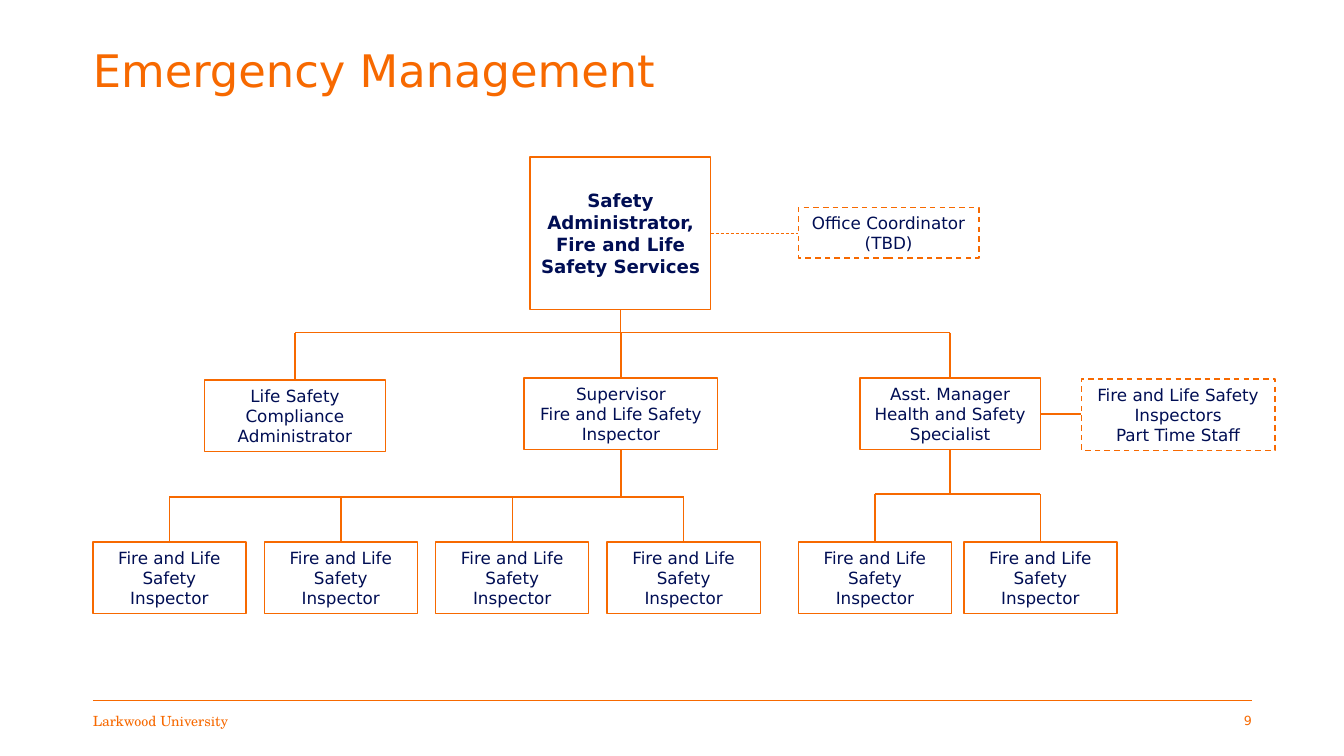
from lxml import etree
from pptx import Presentation
from pptx.dml.color import RGBColor
from pptx.enum.dml import MSO_LINE
from pptx.enum.shapes import MSO_CONNECTOR, MSO_SHAPE
from pptx.enum.text import MSO_ANCHOR, PP_ALIGN
from pptx.oxml.ns import qn
from pptx.util import Cm, Pt

COLORS = {"orange": "F76900", "navy": "000E54"}
SANS, SERIF = "DejaVu Sans", "TeX Gyre Schola"
LEFT, CENTER, RIGHT = PP_ALIGN.LEFT, PP_ALIGN.CENTER, PP_ALIGN.RIGHT
MIDDLE = MSO_ANCHOR.MIDDLE
RECTANGLE, STRAIGHT = MSO_SHAPE.RECTANGLE, MSO_CONNECTOR.STRAIGHT
DASH = MSO_LINE.DASH

MARGIN, CONTENT_WIDTH = Cm(2.34), Cm(29.21)
FOOTER_TOP, FOOTER_WIDTH, FOOTER_HEIGHT = Cm(17.65), Cm(5.33), Cm(1.02)
NARROW, MEDIUM, WIDE, ROW_HEIGHT = 3.86, 4.55, 4.88, 1.8
INSPECTOR = "Fire and Life Safety\nInspector"


def write(frame, text, size=12, font=SANS, color="navy", bold=False,
          align=CENTER, spacing=None, side_inset=None):
    """Fill a text frame, one paragraph for each line of the text."""
    frame.word_wrap = True
    frame.vertical_anchor = MIDDLE
    if side_inset is not None:
        frame.margin_left = frame.margin_right = side_inset
    frame.text = text
    for para in frame.paragraphs:
        para.alignment = align
        para.line_spacing = spacing
        for span in para.runs:
            span.font.name = font
            span.font.size = Pt(size)
            span.font.bold = bold
            span.font.color.rgb = RGBColor.from_string(COLORS[color])


def style_line(line, width=1, dash=None):
    line.color.rgb = RGBColor.from_string(COLORS["orange"])
    line.width = Pt(width)
    if dash is not None:
        line.dash_style = dash


def add_role(page, text, left, top, width, height=ROW_HEIGHT, dash=None, **format):
    """Add an outlined role box; lengths in centimetres."""
    box = page.shapes.add_shape(RECTANGLE, Cm(left), Cm(top), Cm(width), Cm(height))
    box.shadow.inherit = False
    box.fill.background()
    style_line(box.line, dash=dash)
    write(box.text_frame, text, **format)
    return box


def add_rule(page, x1, y1, x2, y2, width=1, dash=None):
    rule = page.shapes.add_connector(STRAIGHT, x1, y1, x2, y2)
    style_line(rule.line, width, dash)
    etree.SubElement(rule._element.spPr, qn("a:effectLst"))


def center_x(box):
    return box.left + box.width // 2


def add_branch(page, parent, children, rail):
    """Join a parent to the boxes below it through a horizontal rail."""
    rail_y = Cm(rail)
    stem = center_x(parent)
    add_rule(page, stem, parent.top + parent.height, stem, rail_y)
    add_rule(page, center_x(children[0]), rail_y, center_x(children[-1]), rail_y)
    for child in children:
        add_rule(page, center_x(child), rail_y, center_x(child), child.top)


def add_side_link(page, box, neighbor, **format):
    y = box.top + box.height // 2
    add_rule(page, box.left + box.width, y, neighbor.left, y, **format)


def add_title(page, text):
    title = page.shapes.title
    title.left, title.top = MARGIN, Cm(0)
    title.width, title.height = CONTENT_WIDTH, Cm(3.68)
    write(title.text_frame, text, size=32, color="orange", align=LEFT,
          spacing=0.9, side_inset=0)


def add_footer(page, owner, number):
    right = MARGIN + CONTENT_WIDTH
    add_rule(page, MARGIN, FOOTER_TOP, right, FOOTER_TOP, width=0.5)
    for text, left, size, font, align in (
            (owner, MARGIN, 10, SERIF, LEFT),
            (number, right - FOOTER_WIDTH, 9, SANS, RIGHT)):
        box = page.shapes.add_textbox(left, FOOTER_TOP, FOOTER_WIDTH, FOOTER_HEIGHT)
        write(box.text_frame, text, size=size, font=font, color="orange",
              align=align, side_inset=0)


def add_chart_of_roles(page):
    # Head of the unit and coordinator
    head = add_role(page, "Safety Administrator, Fire and Life Safety Services",
                    13.36, 3.96, MEDIUM, 3.84, size=13, bold=True)
    coordinator = add_role(page, "Office Coordinator (TBD)",
                           20.12, 5.23, MEDIUM, 1.27, dash=DASH)
    add_side_link(page, head, coordinator, width=0.5, dash=DASH)

    # Second level
    compliance = add_role(page, "Life Safety\nCompliance\nAdministrator",
                          5.16, 9.58, MEDIUM)
    supervisor = add_role(page, "Supervisor\nFire and Life Safety\nInspector",
                          13.21, 9.53, WIDE)
    manager = add_role(page, "Asst. Manager\nHealth and Safety\nSpecialist",
                       21.67, 9.53, MEDIUM)
    part_time = add_role(page, "Fire and Life Safety\nInspectors\nPart Time Staff",
                         27.25, 9.55, WIDE, dash=DASH)
    add_branch(page, head, [compliance, supervisor, manager], 8.38)
    add_side_link(page, manager, part_time)

    # Inspectors under the supervisor and the manager
    for parent, first, step, count, rail in ((supervisor, 2.34, 4.32, 4, 12.52),
                                             (manager, 20.12, 4.17, 2, 12.45)):
        team = [add_role(page, INSPECTOR, first + step * index, 13.66, NARROW)
                for index in range(count)]
        add_branch(page, parent, team, rail)


def main():
    deck = Presentation()
    deck.slide_width, deck.slide_height = Cm(33.87), Cm(19.05)
    page = deck.slides.add_slide(deck.slide_layouts[5])
    add_title(page, "Emergency Management")
    add_chart_of_roles(page)
    add_footer(page, "Larkwood University", "9")
    deck.save("out.pptx")


if __name__ == "__main__":
    main()
